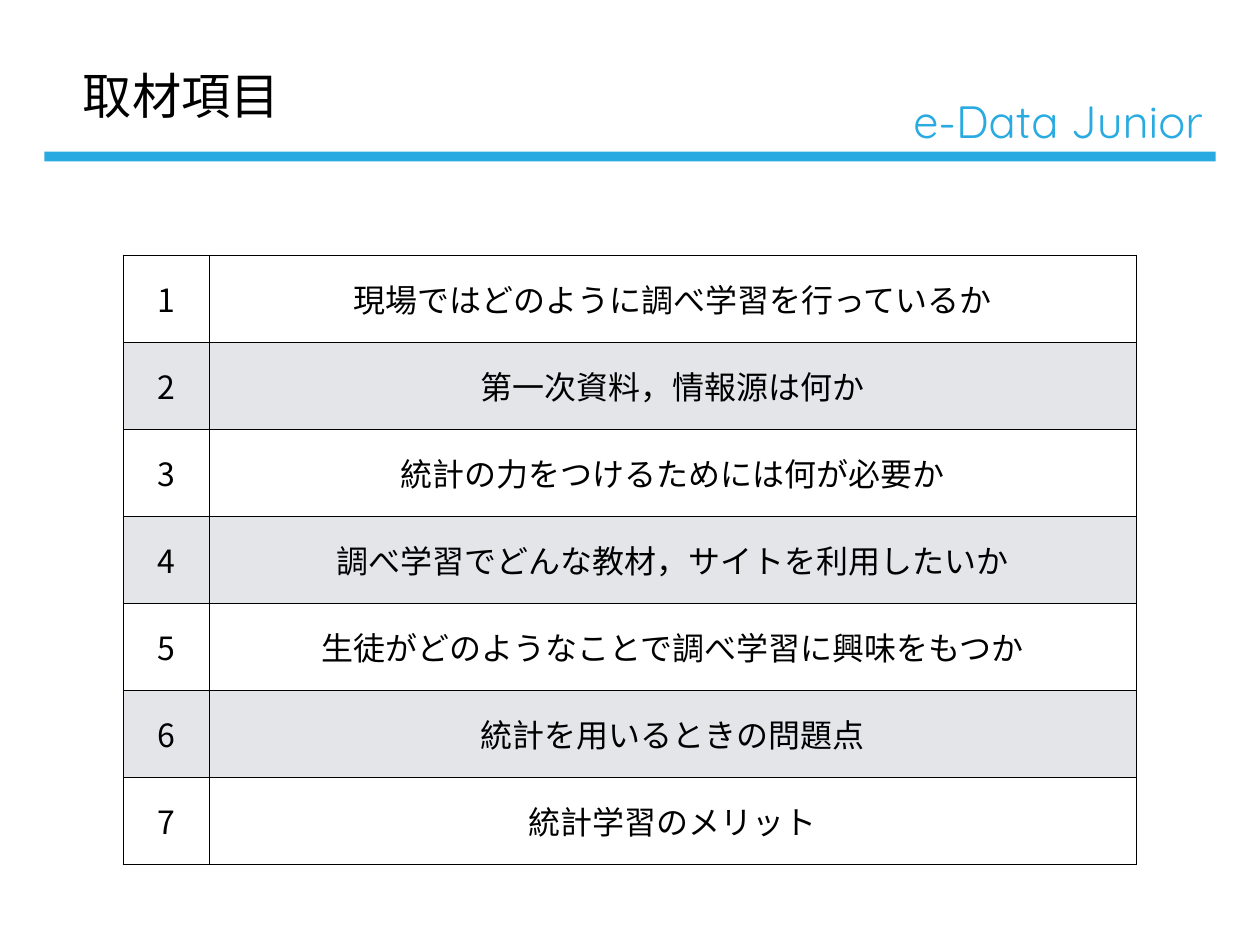
import pptx
import pptx.util
import pptx.dml.color
import pptx.enum.shapes
import pptx.enum.text
import pptx.oxml
import pptx.oxml.ns
from dataclasses import dataclass

Pt = pptx.util.Pt
Align = pptx.enum.text.PP_ALIGN
Anchor = pptx.enum.text.MSO_ANCHOR


@dataclass(frozen=True)
class Theme:
    blue: str = "29ABE2"
    black: str = "000000"
    white: str = "FFFFFF"
    gray: str = "E3E5E8"
    sans: str = "Noto Sans CJK JP"
    round: str = "Quicksand"
    head: float = 40
    brand: float = 36.8
    body: float = 26
    inset: float = 4


class Deck:
    def __init__(self, theme, slide):
        self.theme = theme
        self.slide = slide

    def color(self, code):
        return pptx.dml.color.RGBColor.from_string(code)

    def add_text(self, para, text, size, face, code, align):
        para.alignment = align
        run = para.add_run()
        run.text = text
        run.font.size = Pt(size)
        run.font.name = face
        run.font.color.rgb = self.color(code)
        # East Asian face follows the Latin one
        east = pptx.oxml.parse_xml(
            f'<a:ea {pptx.oxml.ns.nsdecls("a")} typeface="{face}"/>')
        run.font._element.find(pptx.oxml.ns.qn("a:latin")).addnext(east)

    def pad(self, item):
        item.margin_left = item.margin_right = Pt(self.theme.inset)
        item.margin_top = item.margin_bottom = Pt(self.theme.inset)

    def frame(self, shape, anchor, wrap):
        frame = shape.text_frame
        self.pad(frame)
        frame.auto_size = pptx.enum.text.MSO_AUTO_SIZE.NONE
        frame.vertical_anchor = anchor
        frame.word_wrap = wrap
        return frame.paragraphs[0]

    def title(self, text, left, top, width, height):
        shape = self.slide.shapes.title
        shape.left, shape.top = Pt(left), Pt(top)
        shape.width, shape.height = Pt(width), Pt(height)
        para = self.frame(shape, Anchor.MIDDLE, False)
        look = self.theme
        self.add_text(para, text, look.head, look.sans, look.black, Align.LEFT)

    def label(self, text, left, top, width, height):
        box = self.slide.shapes.add_textbox(
            Pt(left), Pt(top), Pt(width), Pt(height))
        para = self.frame(box, Anchor.BOTTOM, True)
        look = self.theme
        self.add_text(para, text, look.brand, look.round, look.blue,
                      Align.CENTER)

    def bar(self, left, top, width, height):
        shape = self.slide.shapes.add_shape(
            pptx.enum.shapes.MSO_SHAPE.RECTANGLE,
            Pt(left), Pt(top), Pt(width), Pt(height))
        shape.shadow.inherit = False
        shape.fill.solid()
        shape.fill.fore_color.rgb = self.color(self.theme.blue)
        shape.line.fill.background()

    def border(self, cell):
        props = cell._tc.get_or_add_tcPr()
        for side in "LRTB":
            props.append(pptx.oxml.parse_xml(
                f'<a:ln{side} {pptx.oxml.ns.nsdecls("a")} w="{Pt(1)}">'
                f'<a:solidFill><a:srgbClr val="{self.theme.black}"/>'
                f'</a:solidFill></a:ln{side}>'))

    def cell(self, cell, text, code):
        look = self.theme
        self.pad(cell)
        cell.vertical_anchor = Anchor.MIDDLE
        self.border(cell)
        cell.fill.solid()
        cell.fill.fore_color.rgb = self.color(code)
        self.add_text(cell.text_frame.paragraphs[0], text, look.body,
                      look.sans, look.black, Align.CENTER)

    def table(self, items, left, top, widths, step):
        grid = self.slide.shapes.add_table(
            len(items), len(widths), Pt(left), Pt(top),
            Pt(sum(widths)), Pt(step * len(items))).table
        grid.first_row = grid.horz_banding = False
        for col, width in zip(grid.columns, widths):
            col.width = Pt(width)
        for num, item in enumerate(items):
            grid.rows[num].height = Pt(step)
            code = self.theme.gray if num % 2 else self.theme.white
            for col, text in enumerate((str(num + 1), item)):
                self.cell(grid.cell(num, col), text, code)


TOPICS = [
    "現場ではどのように調べ学習を行っているか",
    "第一次資料，情報源は何か",
    "統計の力をつけるためには何が必要か",
    "調べ学習でどんな教材，サイトを利用したいか",
    "生徒がどのようなことで調べ学習に興味をもつか",
    "統計を用いるときの問題点",
    "統計学習のメリット",
]


def main():
    show = pptx.Presentation()
    show.slide_width, show.slide_height = Pt(1024), Pt(768)
    slide = show.slides.add_slide(show.slide_layouts.get_by_name("Title Only"))
    deck = Deck(Theme(), slide)

    # Header
    deck.bar(36, 123.3, 952, 8)
    deck.label("e-Data Junior", 732, 72.7, 256, 51)
    deck.title("取材項目", 63.4, 52.6, 169.2, 48.2)

    # Numbered topics
    deck.table(TOPICS, 100, 207.4, (70.2, 753.6), 70.7)

    show.save("out.pptx")


if __name__ == "__main__":
    main()
